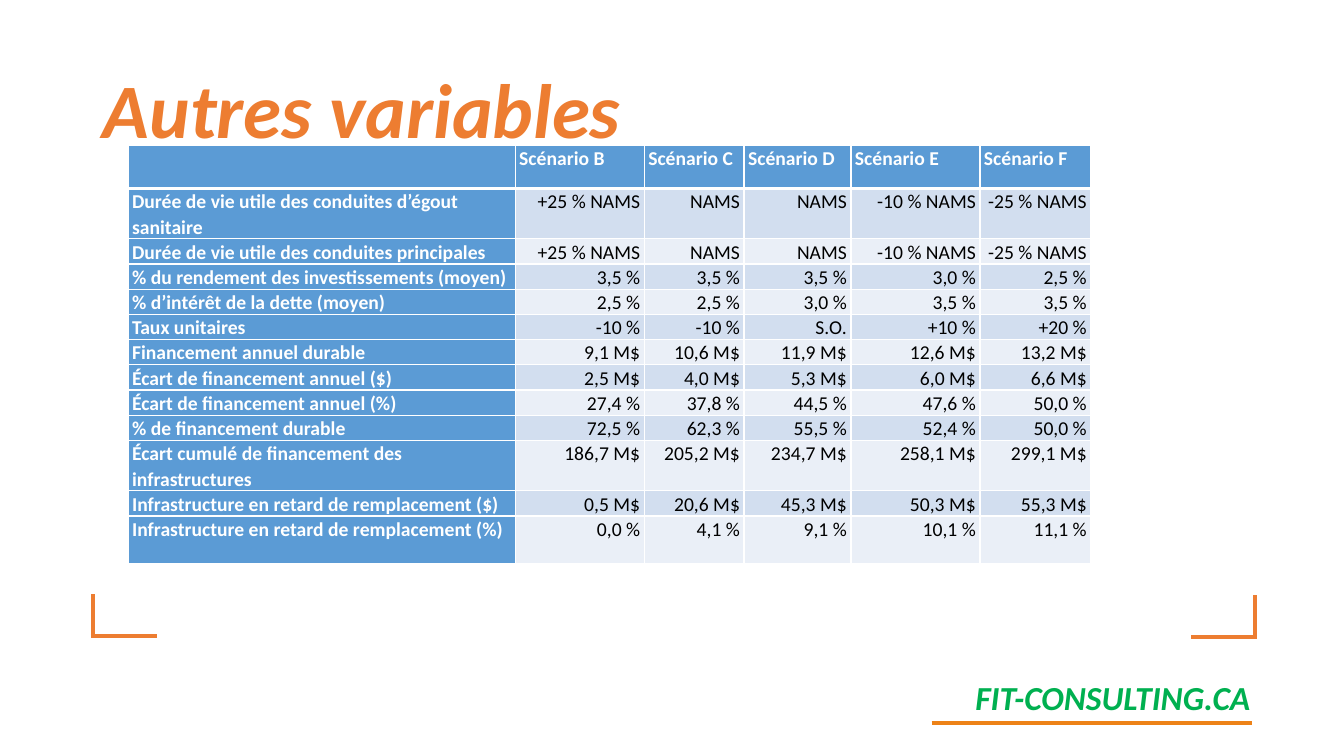
"""Build the slide "Autres variables" with its scenario comparison table."""
import lxml.etree
import pptx
import pptx.dml.color
import pptx.enum.shapes
import pptx.enum.text
import pptx.oxml.ns
import pptx.util

PX = 9144
FONT = "Calibri"
COLORS = {
    "orange": "ED7D31", "rule": "ED8217", "green": "00B050", "blue": "5B9BD5",
    "band_dark": "D2DEEF", "band_light": "EAEFF7", "white": "FFFFFF", "black": "000000",
}
ALIGN = pptx.enum.text.PP_ALIGN


def format_paragraph(paragraph, size, color, align=ALIGN.LEFT, italic=False, bold=True):
    paragraph.alignment = align
    for run in paragraph.runs:
        run.font.name = FONT
        run.font.size = pptx.util.Pt(size)
        run.font.bold = bold
        run.font.italic = italic
        run.font.color.rgb = pptx.dml.color.RGBColor.from_string(COLORS[color])


def set_borders(cell, borders):
    properties = cell._tc.get_or_add_tcPr()
    for side, (color, points) in borders.items():
        line = lxml.etree.SubElement(properties, pptx.oxml.ns.qn(f"a:ln{side}"),
                                     w=str(pptx.util.Pt(points)))
        fill = lxml.etree.SubElement(line, pptx.oxml.ns.qn("a:solidFill"))
        lxml.etree.SubElement(fill, pptx.oxml.ns.qn("a:srgbClr"), val=COLORS[color])


presentation = pptx.Presentation()
presentation.slide_width = 1333 * PX
presentation.slide_height = 750 * PX
slide = presentation.slides.add_slide(presentation.slide_layouts[5])

title = slide.shapes.title
title.left, title.top, title.width, title.height = 92 * PX, 40 * PX, 1150 * PX, 145 * PX
title.text_frame.text = "Autres variables"
title.text_frame.vertical_anchor = pptx.enum.text.MSO_ANCHOR.MIDDLE
title.text_frame.paragraphs[0].line_spacing = 0.9
format_paragraph(title.text_frame.paragraphs[0], 55, "orange", italic=True)

site = slide.shapes.add_textbox(873 * PX, 667 * PX, 377 * PX, 50 * PX)
site.text_frame.word_wrap = True
site.text_frame.text = "FIT-CONSULTING.CA"
format_paragraph(site.text_frame.paragraphs[0], 24, "green", ALIGN.RIGHT, italic=True)

rule = slide.shapes.add_connector(pptx.enum.shapes.MSO_CONNECTOR.STRAIGHT,
                                  924 * PX, 717 * PX, 1242 * PX, 717 * PX)
rule.line.color.rgb = pptx.dml.color.RGBColor.from_string(COLORS["rule"])
rule.line.width = pptx.util.Pt(3)
lxml.etree.SubElement(rule._element.spPr, pptx.oxml.ns.qn("a:effectLst"))

thin, thick, accent = ("white", 1), ("white", 3), ("orange", 3)
corners = [
    (92, 590, {"L": accent, "R": thin, "T": thin, "B": accent}),
    (1181, 591, {"R": accent, "B": accent}),
]
for left, top, borders in corners:
    corner = slide.shapes.add_table(1, 1, left * PX, top * PX, 64 * PX, 41 * PX).table
    set_borders(corner.cell(0, 0), borders)
    corner.cell(0, 0).fill.background()

rows = [
    ["", "Scénario B", "Scénario C", "Scénario D", "Scénario E", "Scénario F"],
    ["Durée de vie utile des conduites d’égout sanitaire",
     "+25 % NAMS", "NAMS", "NAMS", "-10 % NAMS", "-25 % NAMS"],
    ["Durée de vie utile des conduites principales",
     "+25 % NAMS", "NAMS", "NAMS", "-10 % NAMS", "-25 % NAMS"],
    ["% du rendement des investissements (moyen)", "3,5 %", "3,5 %", "3,5 %", "3,0 %", "2,5 %"],
    ["% d’intérêt de la dette (moyen)", "2,5 %", "2,5 %", "3,0 %", "3,5 %", "3,5 %"],
    ["Taux unitaires", "-10 %", "-10 %", "S.O.", "+10 %", "+20 %"],
    ["Financement annuel durable", "9,1 M$", "10,6 M$", "11,9 M$", "12,6 M$", "13,2 M$"],
    ["Écart de financement annuel ($)", "2,5 M$", "4,0 M$", "5,3 M$", "6,0 M$", "6,6 M$"],
    ["Écart de financement annuel (%)", "27,4 %", "37,8 %", "44,5 %", "47,6 %", "50,0 %"],
    ["% de financement durable", "72,5 %", "62,3 %", "55,5 %", "52,4 %", "50,0 %"],
    ["Écart cumulé de financement des infrastructures",
     "186,7 M$", "205,2 M$", "234,7 M$", "258,1 M$", "299,1 M$"],
    ["Infrastructure en retard de remplacement ($)",
     "0,5 M$", "20,6 M$", "45,3 M$", "50,3 M$", "55,3 M$"],
    ["Infrastructure en retard de remplacement (%)",
     "0,0 %", "4,1 %", "9,1 %", "10,1 %", "11,1 %"],
]
column_widths = [384, 128, 99, 106, 128, 110]
row_heights = [43, 25, 8, 15, 23, 23, 24, 23, 23, 23, 47, 18, 47]

scenario_frame = slide.shapes.add_table(len(rows), len(column_widths),
                                        127 * PX, 144 * PX, 954 * PX, 403 * PX)
scenarios = scenario_frame.table
for column, width in zip(scenarios.columns, column_widths):
    column.width = width * PX
for row, height in zip(scenarios.rows, row_heights):
    row.height = height * PX
scenario_frame.height = 403 * PX

for row_index, row in enumerate(rows):
    for column_index, text in enumerate(row):
        cell = scenarios.cell(row_index, column_index)
        is_header = row_index == 0
        is_value = row_index > 0 and column_index > 0
        borders = {"L": thin, "R": thin}
        if is_header:
            borders["T"] = thin
        borders["B"] = thick if is_header else thin
        set_borders(cell, borders)
        band = "band_dark" if row_index % 2 else "band_light"
        cell.fill.solid()
        cell.fill.fore_color.rgb = pptx.dml.color.RGBColor.from_string(
            COLORS[band if is_value else "blue"])
        if not text:
            continue
        cell.margin_left = cell.margin_right = 4 * PX
        cell.margin_top = cell.margin_bottom = 0
        cell.text_frame.text = text
        paragraph = cell.text_frame.paragraphs[0]
        paragraph.line_spacing = 1.07
        paragraph.space_after = pptx.util.Pt(8)
        format_paragraph(paragraph, 14, "black" if is_value else "white",
                         ALIGN.RIGHT if is_value else ALIGN.LEFT, bold=not is_value)

presentation.save("out.pptx")
